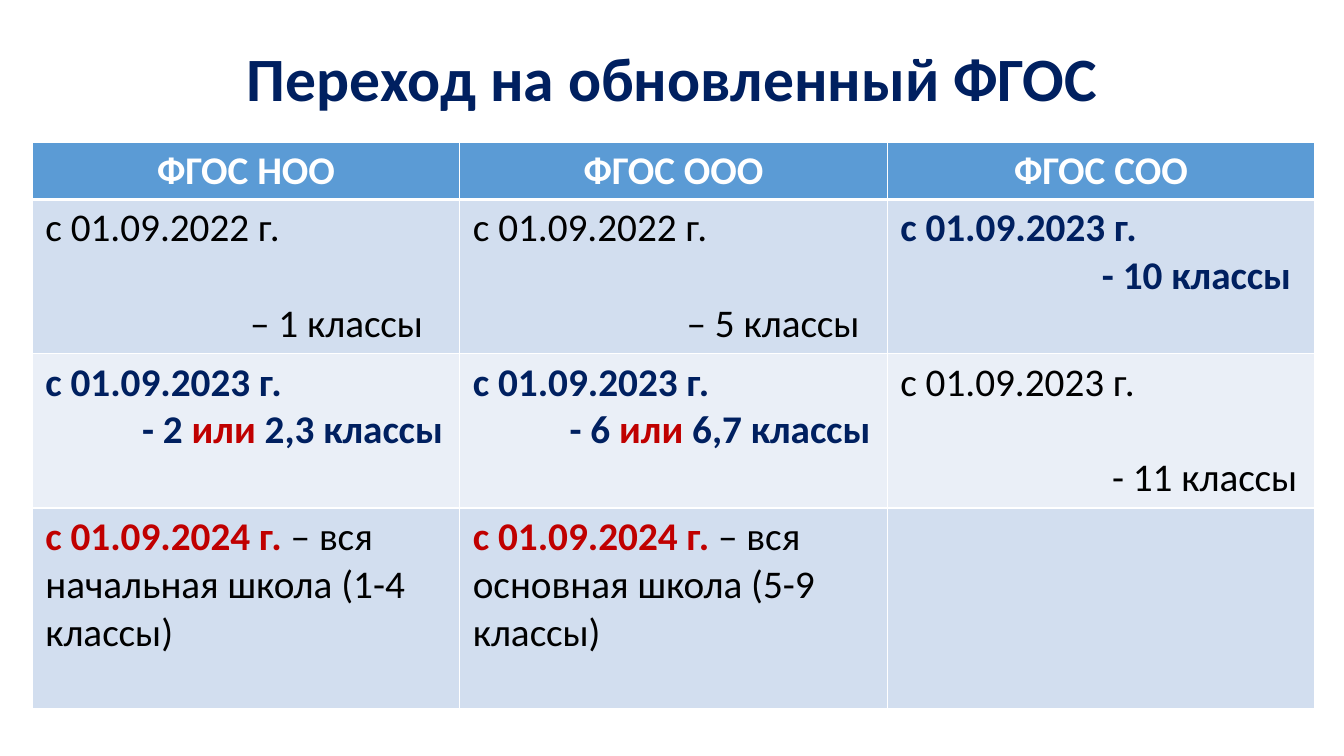
import pptx
import pptx.dml.color
import pptx.enum.text
import pptx.util
from lxml import etree
from pptx.oxml.ns import qn

Inches = pptx.util.Inches
Pt = pptx.util.Pt
Align = pptx.enum.text.PP_ALIGN
Anchor = pptx.enum.text.MSO_ANCHOR

COLORS = {"navy": "002060", "red": "C00000", "black": "000000", "white": "FFFFFF",
          "head": "5B9BD5", "odd": "D2DEEF", "even": "EAEFF7"}


def color(name):
    return pptx.dml.color.RGBColor.from_string(COLORS[name])


def write(para, runs, size):
    para.font.name = "Calibri"
    para.font.size = Pt(size)
    tones = {tone for _, tone in runs}
    for text, tone in runs:
        run = para.add_run()
        run.text = text
        font = para.font if len(tones) == 1 else run.font
        font.bold = tone != "black"
        font.color.rgb = color(tone)


deck = pptx.Presentation()
deck.slide_width = Inches(13.33)
deck.slide_height = Inches(7.5)
slide = deck.slides.add_slide(deck.slide_layouts[6])

title = slide.shapes.add_textbox(Inches(0.92), Inches(0.4), Inches(11.5), Inches(0.82)).text_frame
title.word_wrap = True
title.vertical_anchor = Anchor.MIDDLE
head = title.paragraphs[0]
head.alignment = Align.CENTER
head.line_spacing = 0.9
write(head, [("Переход на обновленный ФГОС", "navy")], 44)

# Each paragraph: indent in inches, space before in points, runs
rows = [
    [[(0, 0, [(name, "white")])] for name in ("ФГОС НОО", "ФГОС ООО", "ФГОС СОО")],
    [
        [(0, 0, [("с 01.09.2022 г.", "black")]), (2.03, 34, [("– 1 классы", "black")])],
        [(0, 0, [("с 01.09.2022 г.", "black")]), (2.12, 34, [("– 5 классы", "black")])],
        [(0, 0, [("с 01.09.2023 г.", "navy")]), (2, 0, [("- 10 классы", "navy")])],
    ],
    [
        [(0, 0, [("с 01.09.2023 г.", "navy")]),
         (0.96, 0, [("- 2 ", "navy"), ("или ", "red"), ("2,3 классы", "navy")])],
        [(0, 0, [("с 01.09.2023 г.", "navy")]),
         (0.96, 0, [("- 6 ", "navy"), ("или ", "red"), ("6,7 классы", "navy")])],
        [(0, 0, [("с 01.09.2023 г.", "black")]), (2.1, 34, [("- 11 классы", "black")])],
    ],
    [
        [(0, 0, [("с 01.09.2024 г. ", "red"), (f"– вся {school} классы)", "black")])]
        for school in ("начальная школа (1-4", "основная школа (5-9")
    ] + [[]],
]
fills = ["head", "odd", "even", "odd"]
heights = [0.57, 1.53, 1.53, 1.99]

table = slide.shapes.add_table(4, 3, Inches(0.32), Inches(1.41),
                               Inches(12.72), Inches(sum(heights))).table
for col in table.columns:
    col.width = Inches(4.24)

for r, row in enumerate(rows):
    table.rows[r].height = Inches(heights[r])
    for c, paras in enumerate(row):
        cell = table.cell(r, c)
        cell.margin_left = cell.margin_right = Inches(0.13)
        cell.margin_top = cell.margin_bottom = Inches(0.05)
        props = cell._tc.get_or_add_tcPr()
        for side in "LRTB":
            thick = (r == 0 and side == "B") or (r == 1 and side == "T")
            line = etree.SubElement(props, qn(f"a:ln{side}"), w=str(Pt(3 if thick else 1)))
            fill = etree.SubElement(line, qn("a:solidFill"))
            etree.SubElement(fill, qn("a:srgbClr"), val=COLORS["white"])
        cell.fill.solid()
        cell.fill.fore_color.rgb = color(fills[r])
        for i, (indent, gap, runs) in enumerate(paras):
            frame = cell.text_frame
            para = frame.add_paragraph() if i else frame.paragraphs[0]
            para.alignment = Align.LEFT if r else Align.CENTER
            if indent:
                para._p.get_or_add_pPr().set("marL", str(Inches(indent)))
            if gap:
                para.space_before = Pt(gap)
            write(para, runs, 28)

deck.save("out.pptx")
